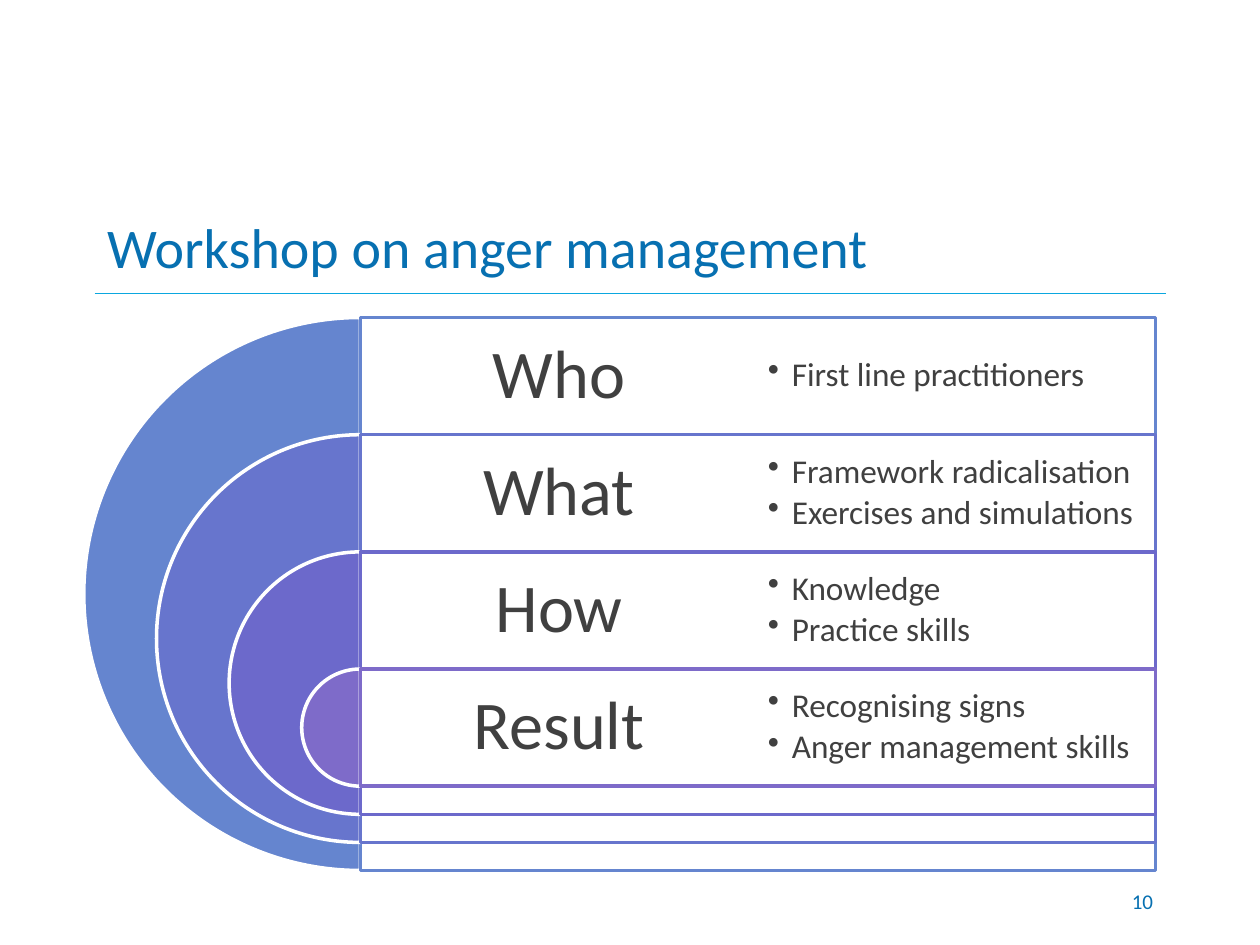
"""Build the slide on the anger management workshop."""
from dataclasses import dataclass

from lxml import etree
from pptx import Presentation
from pptx.dml.color import RGBColor
from pptx.enum.shapes import MSO_CONNECTOR, MSO_SHAPE
from pptx.enum.text import MSO_ANCHOR, PP_ALIGN
from pptx.oxml.ns import qn
from pptx.util import Inches, Pt

PIE, RECT = MSO_SHAPE.PIE, MSO_SHAPE.RECTANGLE
LINE = MSO_CONNECTOR.STRAIGHT
LEFT, MID, RIGHT = PP_ALIGN.LEFT, PP_ALIGN.CENTER, PP_ALIGN.RIGHT
MIDDLE = MSO_ANCHOR.MIDDLE
TITLE_ONLY = 5


@dataclass(frozen=True)
class Theme:
    """Colours, font and type sizes."""
    font: str = "Calibri"
    head: str = "0770B1"
    rule: str = "0BA7DF"
    text: str = "404040"
    paper: str = "FFFFFF"
    title: int = 32
    label: int = 39
    item: int = 19
    page: int = 12
    edge: int = 2


@dataclass(frozen=True)
class Grid:
    """Rows and columns of the bands, in inches."""
    left: float = 2.86
    top: float = 2.52
    col: float = 3.155
    row: float = 0.93
    step: float = 1.153

    def x(self, col: int) -> float:
        """Give the left edge of a column."""
        return self.left + col * self.col

    def y(self, row: int) -> float:
        """Give the top edge of a row."""
        return self.top + row * self.row


@dataclass(frozen=True)
class Band:
    """One topic with its colour and points."""
    label: str
    colour: str
    items: tuple[str, ...]


THEME = Theme()
GRID = Grid()
MARGIN, WIDE = 0.75, 8.5
BANDS = (
    Band("Who", "6585CF", ("First line practitioners",)),
    Band("What", "6775CD", ("Framework radicalisation", "Exercises and simulations")),
    Band("How", "6C69CB", ("Knowledge", "Practice skills")),
    Band("Result", "7E6BC9", ("Recognising signs", "Anger management skills")),
)


def add_run(para, text: str, size: int, colour: str) -> None:
    """Add one styled run to a paragraph."""
    run = para.add_run()
    run.text = text
    run.font.name = THEME.font
    run.font.size = Pt(size)
    run.font.color.rgb = RGBColor.from_string(colour)


def add_box(slide, box: tuple[float, ...], inset: float):
    """Add a wrapped text box and return its frame."""
    frame = slide.shapes.add_textbox(*map(Inches, box)).text_frame
    frame.word_wrap = True
    frame.vertical_anchor = MIDDLE
    frame.margin_left = frame.margin_right = Inches(inset)
    frame.margin_top = frame.margin_bottom = Inches(inset)
    return frame


def add_form(slide, kind, box: tuple[float, ...], fill: str, line: str):
    """Add a filled and outlined shape."""
    form = slide.shapes.add_shape(kind, *map(Inches, box))
    form.shadow.inherit = False
    form.fill.solid()
    form.fill.fore_color.rgb = RGBColor.from_string(fill)
    form.line.color.rgb = RGBColor.from_string(line)
    form.line.width = Pt(THEME.edge)
    return form


def add_band(slide, row: int, band: Band) -> None:
    """Draw the half disc, panel and label of a band."""
    size = GRID.row + (len(BANDS) - 1 - row) * GRID.step
    top = GRID.y(row)
    disc = add_form(slide, PIE, (GRID.left - size / 2, top, size, size),
                    band.colour, THEME.paper)
    disc.adjustments[0], disc.adjustments[1] = 54, 162
    panel = add_form(slide, RECT, (GRID.left, top, 2 * GRID.col, size),
                     THEME.paper, band.colour)
    tint = panel.fill._xPr.find(qn("a:solidFill"))[0]
    etree.SubElement(tint, qn("a:alpha"), val="90000")
    para = add_box(slide, (GRID.left, top, GRID.col, GRID.row), 0.16).paragraphs[0]
    para.alignment = MID
    para.line_spacing = 0.9
    add_run(para, band.label, THEME.label, THEME.text)


def add_list(slide, row: int, band: Band) -> None:
    """Write the points of a band as bullets."""
    frame = add_box(slide, (GRID.x(1), GRID.y(row), GRID.col, GRID.row), 0.08)
    for spot, item in enumerate(band.items):
        para = frame.add_paragraph() if spot else frame.paragraphs[0]
        props = para._p.get_or_add_pPr()
        props.set("marL", str(Inches(0.19)))
        props.set("indent", str(-Inches(0.19)))
        etree.SubElement(props, qn("a:buChar"), char="•")
        para.level = 1
        para.alignment = LEFT
        para.line_spacing = 0.9
        para.space_after = Pt(3)
        add_run(para, item, THEME.item, THEME.text)


def add_head(slide) -> None:
    """Place the title and the rule below it."""
    title = slide.shapes.title
    title.left, title.top = Inches(MARGIN), Inches(1.58)
    title.width, title.height = Inches(WIDE), Inches(0.75)
    title.text_frame.vertical_anchor = MIDDLE
    para = title.text_frame.paragraphs[0]
    para.alignment = LEFT
    add_run(para, "Workshop on anger management", THEME.title, THEME.head)
    ends = (MARGIN, 2.33, MARGIN + WIDE, 2.33)
    rule = slide.shapes.add_connector(LINE, *map(Inches, ends))
    rule.line.color.rgb = RGBColor.from_string(THEME.rule)
    rule.line.width = Pt(0.75)
    etree.SubElement(rule._element.spPr, qn("a:effectLst"))


def add_page(slide) -> None:
    """Write the page number."""
    para = add_box(slide, (7.17, 6.95, 2.08, 0.4), 0.1).paragraphs[0]
    para.alignment = RIGHT
    add_run(para, "10", THEME.page, THEME.head)


def main() -> None:
    """Build and save the deck."""
    deck = Presentation()
    deck.slide_width, deck.slide_height = Inches(10), Inches(7.5)
    slide = deck.slides.add_slide(deck.slide_layouts[TITLE_ONLY])
    add_head(slide)
    for row, band in enumerate(BANDS):
        add_band(slide, row, band)
    for row, band in enumerate(BANDS):
        add_list(slide, row, band)
    add_page(slide)
    deck.save("out.pptx")


if __name__ == "__main__":
    main()
